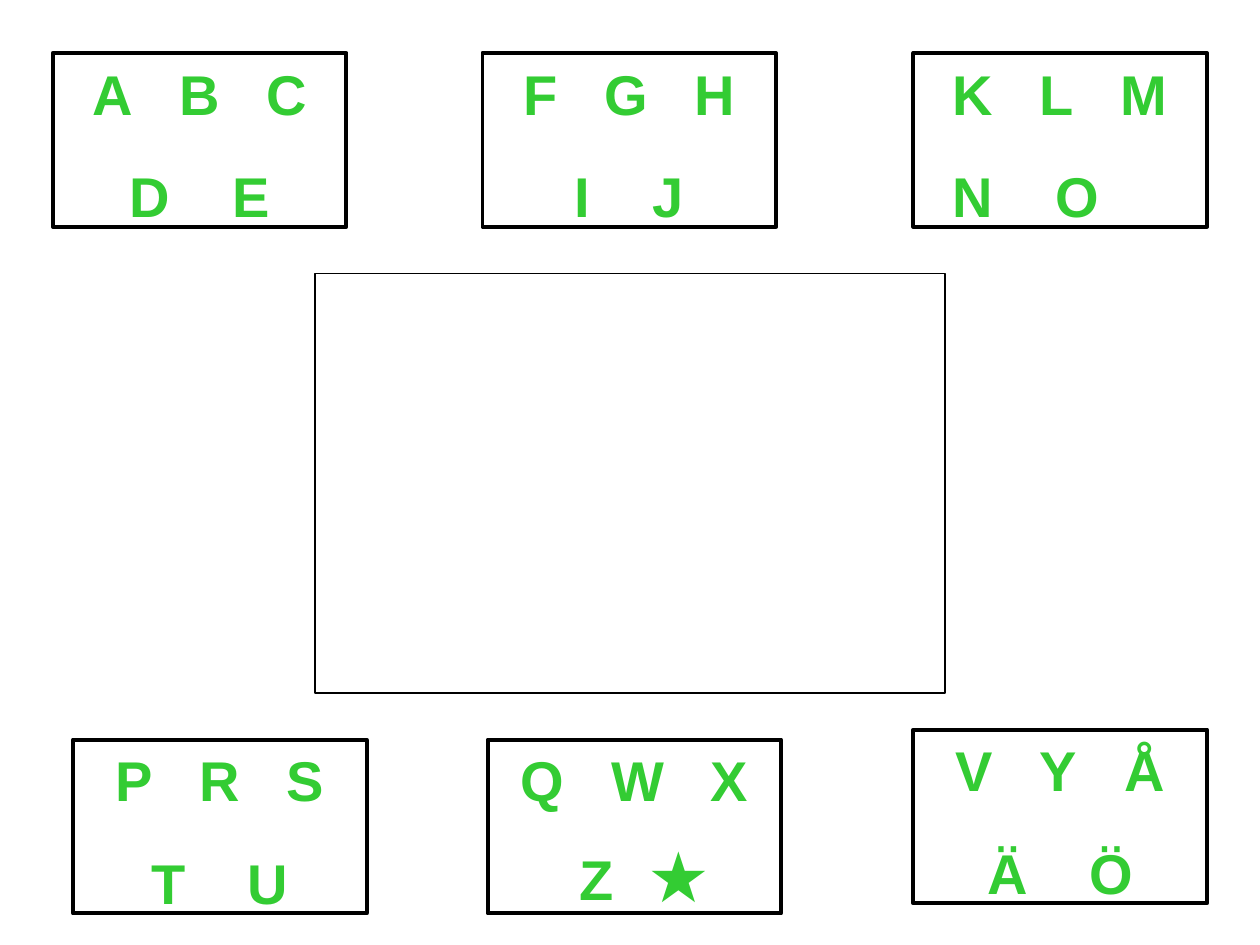
import pptx
import pptx.dml.color
import pptx.enum.shapes
import pptx.enum.text
import pptx.util
from pptx.util import Inches

GREEN = "33CC33"
BLACK = "000000"
SPACE_WIDTH = 0.278  # width of an Arial space, in ems


def color(hex_string):
    return pptx.dml.color.RGBColor.from_string(hex_string)


def add_text(paragraph, text, size=32, gap=1, fill=GREEN, bold=True, font="Arial"):
    """Write the words of text, widening the space between them to `gap` spaces."""
    words = text.split()
    for index, word in enumerate(words):
        pieces = [word] if index == len(words) - 1 else [word, " "]
        for piece in pieces:
            run = paragraph.add_run()
            run.text = piece
            run.font.name = font
            run.font.size = pptx.util.Pt(size)
            run.font.bold = bold
            run.font.color.rgb = color(fill)
            if piece == " ":
                extra = (gap - 1) * SPACE_WIDTH * size
                run.font._element.set("spc", str(round(extra * 100)))


class LetterBoard:
    card_width, card_height = 2.33, 1.38

    def __init__(self, slide):
        self.shapes = slide.shapes

    def frame(self, left, top, width, height, line_width):
        frame = self.shapes.add_shape(
            pptx.enum.shapes.MSO_SHAPE.RECTANGLE,
            Inches(left), Inches(top), Inches(width), Inches(height))
        frame.shadow.inherit = False
        frame.fill.background()
        frame.line.color.rgb = color(BLACK)
        frame.line.width = pptx.util.Pt(line_width)
        return frame

    def card(self, left, top, upper, lower="", lower_indent=None):
        """Draw a letter card; an indented lower row is left-aligned."""
        card = self.frame(left, top, self.card_width, self.card_height, 2.25)
        body = card.text_frame
        body.word_wrap = True
        body.vertical_anchor = pptx.enum.text.MSO_ANCHOR.TOP
        upper_row = body.paragraphs[0]
        upper_row.alignment = pptx.enum.text.PP_ALIGN.CENTER
        add_text(upper_row, upper, gap=3)
        if lower:
            lower_row = body.add_paragraph()
            lower_row.space_before = pptx.util.Pt(20)
            lower_row.alignment = pptx.enum.text.PP_ALIGN.CENTER
            if lower_indent is not None:
                lower_row.alignment = pptx.enum.text.PP_ALIGN.LEFT
                lower_row._p.get_or_add_pPr().set("marL", str(Inches(lower_indent)))
            add_text(lower_row, lower, gap=4)

    def symbol(self, left, top, width, height, text, size):
        box = self.shapes.add_textbox(
            Inches(left), Inches(top), Inches(width), Inches(height))
        box.text_frame.word_wrap = True
        add_text(box.text_frame.paragraphs[0], text, size=size)


def main():
    presentation = pptx.Presentation()
    presentation.slide_width = Inches(10)
    presentation.slide_height = Inches(7.5)
    board = LetterBoard(presentation.slides.add_slide(presentation.slide_layouts[6]))

    cards = [
        (0.42, 0.42, "A B C", "D E"),
        (3.83, 0.42, "F G H", "I J"),
        (7.25, 0.42, "K L M", "N O", 0.21),
        (0.58, 5.87, "P R S", "T U"),
        (7.25, 5.79, "V Y Å", "Ä Ö"),
        (3.87, 5.87, "Q W X"),
    ]
    for card in cards:
        board.card(*card)
    board.frame(2.5, 2.17, 5, 3.33, 0.75)
    board.symbol(5.04, 6.56, 0.76, 0.77, "★", 40)
    board.symbol(4.5, 6.65, 0.76, 0.64, "Z", 32)

    presentation.save("out.pptx")


if __name__ == "__main__":
    main()
